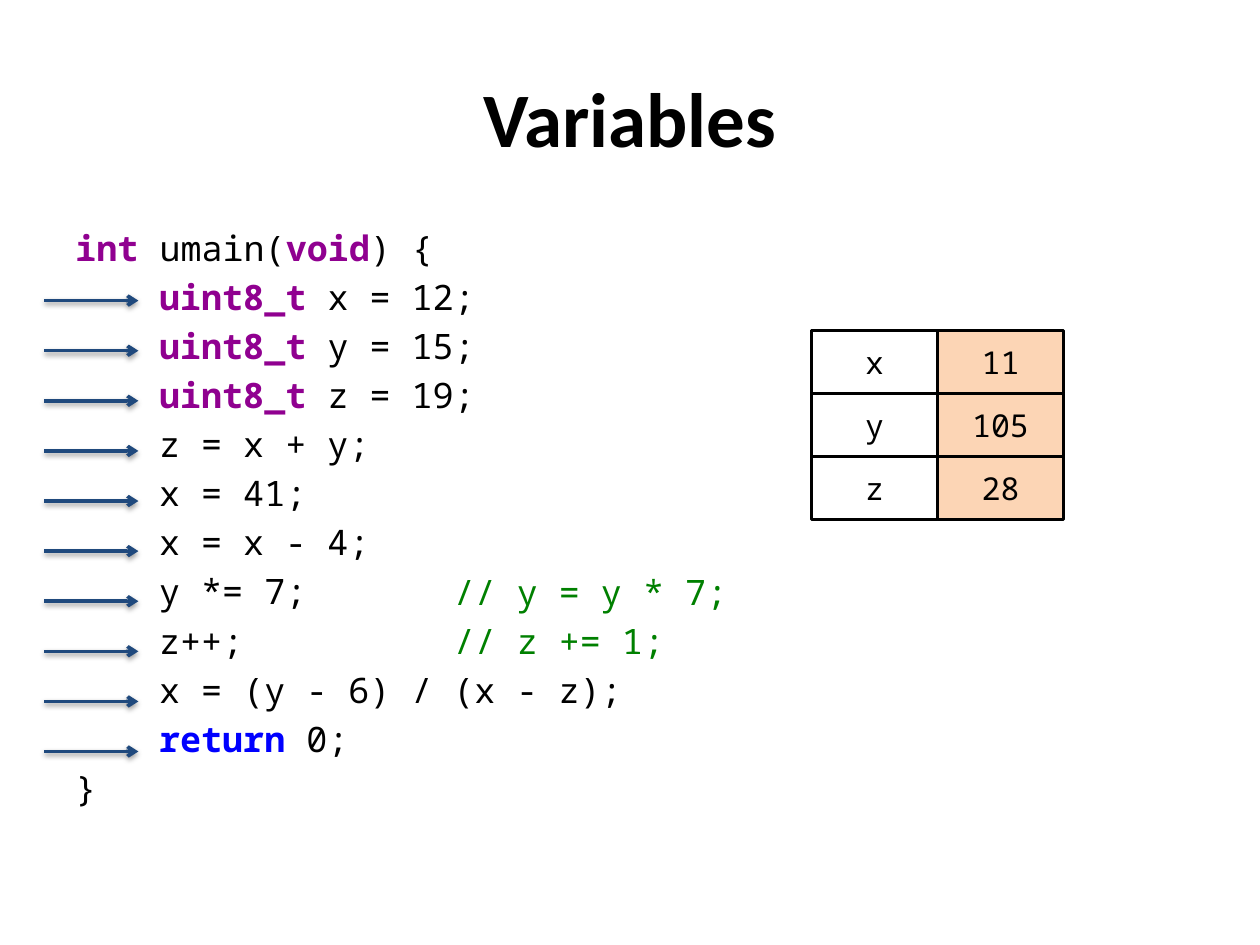
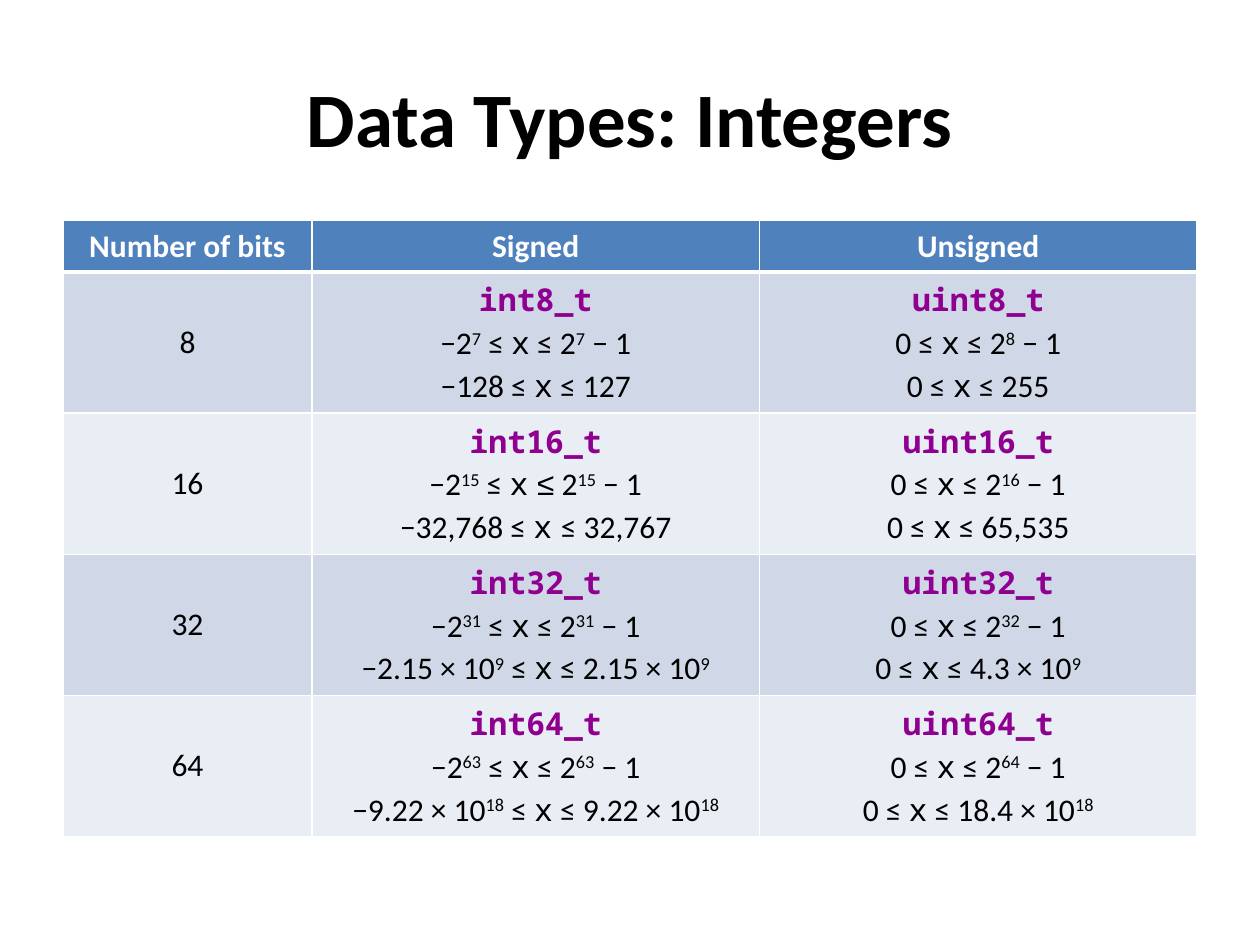
from lxml import etree
from pptx import Presentation
from pptx import util as u
from pptx.dml.color import RGBColor
from pptx.enum import shapes, text
from pptx.oxml.ns import qn

Cm, Pt = u.Cm, u.Pt

COLOURS = {
    "black": "000000", "white": "FFFFFF", "type": "900090", "keyword": "0000FF",
    "comment": "008000", "arrow": "1F497D", "value": "FCD5B5",
    "header": "4F81BD", "band_dark": "D0D8E8", "band_light": "E9EDF4",
}
SANS, MONO = "Calibri", "Noto Sans Mono"
MARKS = {
    "@": {"font": MONO, "colour": "type", "bold": True},
    "$": {"colour": "keyword", "bold": True},
    "^": {"raised": True},
    "`": {"font": MONO},
    "~": {"font": "Arial"},
}

CODE = [
    "@int @umain(@void@) {",
    "@uint8_t @x = 12;",
    "@uint8_t @y = 15;",
    "@uint8_t @z = 19;",
    "z = x + y;",
    "x = 41;",
    "x = x - 4;",
    "y *= 7;",
    "z++;",
    "x = (y - 6) / (x - z);",
    "$return $0;",
    "}",
]
COMMENTS = ["// y = y * 7;", "// z += 1;"]
VARIABLES = [("x", "11"), ("y", "105"), ("z", "28")]
INTEGERS = [
    (8, " ≤", "−128 ≤ `x` ≤ 127", "0 ≤ `x` ≤ 255"),
    (16, "~ ≤~", "−32,768 ≤ `x`~ ~≤ 32,767", "0 ≤ `x` ≤ 65,535"),
    (32, " ≤", "−2.15 × 10^9^ ≤ `x` ≤ 2.15 × 10^9^", "0 ≤ `x` ≤ 4.3 × 10^9^"),
    (64, " ≤", "−9.22 × 10^18^ ≤ `x` ≤ 9.22 × 10^18^", "0 ≤ `x` ≤ 18.4 × 10^18^"),
]


def rgb(name):
    return RGBColor.from_string(COLOURS[name])


def split_marks(line):
    active, piece = None, ""
    for letter in line:
        if letter == active or (active is None and letter in MARKS):
            if piece:
                yield piece, MARKS.get(active, {})
            active, piece = (None if active else letter), ""
        else:
            piece += letter
    if piece:
        yield piece, MARKS.get(active, {})


def write(frame, lines, align=text.PP_ALIGN.CENTER, before=0, **base):
    for number, line in enumerate(lines):
        paragraph = frame.paragraphs[0] if number == 0 else frame.add_paragraph()
        paragraph.alignment = align
        paragraph.space_before = Pt(before)
        for piece, change in split_marks(line):
            look = {"font": SANS, "size": 18, "colour": "black", "bold": False, **base, **change}
            run = paragraph.add_run()
            run.text = piece
            run.font.name = look["font"]
            run.font.size = Pt(look["size"])
            run.font.bold = look["bold"]
            run.font.color.rgb = rgb(look["colour"])
            if look.get("raised"):
                run._r.get_or_add_rPr().set("baseline", "30000")


class Deck:
    def __init__(self):
        self.show = Presentation()
        self.show.slide_width, self.show.slide_height = Cm(25.4), Cm(19.05)
        self.slide = None

    def page(self, heading):
        self.slide = self.show.slides.add_slide(self.show.slide_layouts[5])
        title = self.slide.shapes.title
        title.left, title.top, title.width, title.height = Cm(1.27), Cm(0.76), Cm(22.86), Cm(3.18)
        title.text_frame.vertical_anchor = text.MSO_ANCHOR.MIDDLE
        write(title.text_frame, [heading], size=44, bold=True)

    def code(self, lines, left, top, width, height, colour="black"):
        frame = self.slide.shapes.add_textbox(Cm(left), Cm(top), Cm(width), Cm(height)).text_frame
        frame.word_wrap = True
        write(frame, lines, align=text.PP_ALIGN.LEFT, before=4, font=MONO, size=20, colour=colour)
        return frame.paragraphs

    def box(self, label, left, top, width, height, fill):
        box = self.slide.shapes.add_shape(
            shapes.MSO_SHAPE.RECTANGLE, Cm(left), Cm(top), Cm(width), Cm(height))
        box.shadow.inherit = False
        box.fill.solid()
        box.fill.fore_color.rgb = rgb(fill)
        box.line.color.rgb = rgb("black")
        box.line.width = Pt(2)
        box.text_frame.vertical_anchor = text.MSO_ANCHOR.MIDDLE
        write(box.text_frame, [label], font=MONO)

    def arrow(self, start, end, level):
        arrow = self.slide.shapes.add_connector(
            shapes.MSO_CONNECTOR.STRAIGHT, Cm(start), Cm(level), Cm(end), Cm(level))
        arrow.line.color.rgb = rgb("arrow")
        arrow.line.width = Pt(2)
        etree.SubElement(arrow.line._get_or_add_ln(), qn("a:tailEnd"), type="arrow")
        effects = etree.SubElement(arrow._element.spPr, qn("a:effectLst"))
        shadow = etree.SubElement(effects, qn("a:outerShdw"), blurRad=str(Pt(3.1)),
                                  dist=str(Pt(1.6)), dir="5400000", rotWithShape="0")
        shade = etree.SubElement(shadow, qn("a:srgbClr"), val=COLOURS["black"])
        etree.SubElement(shade, qn("a:alpha"), val="38000")

    def table(self, rows, left, top, widths, heights):
        grid = self.slide.shapes.add_table(
            len(rows), len(widths), Cm(left), Cm(top), Cm(sum(widths)), Cm(sum(heights))).table
        for column, width in zip(grid.columns, widths):
            column.width = Cm(width)
        for number, (row, height) in enumerate(zip(rows, heights)):
            grid.rows[number].height = Cm(height)
            fill = "header" if number == 0 else ("band_light", "band_dark")[number % 2]
            look = {"colour": "white", "bold": True} if number == 0 else {}
            edges = {"L": 1, "R": 1, "T": 3 if number == 1 else 1, "B": 3 if number == 0 else 1}
            for cell, lines in zip(grid.rows[number].cells, row):
                self.edge(cell, edges)
                cell.fill.solid()
                cell.fill.fore_color.rgb = rgb(fill)
                cell.vertical_anchor = text.MSO_ANCHOR.MIDDLE
                write(cell.text_frame, lines, **look)

    def edge(self, cell, edges):
        props = cell._tc.get_or_add_tcPr()
        for side, width in edges.items():
            line = etree.SubElement(props, qn(f"a:ln{side}"), w=str(Pt(width)))
            paint = etree.SubElement(line, qn("a:solidFill"))
            etree.SubElement(paint, qn("a:srgbClr"), val=COLOURS["white"])


def variables(deck):
    deck.page("Variables")
    listing = deck.code(CODE, 1.27, 4.45, 22.86, 12.57)
    for statement in listing[1:-1]:
        props = statement._p.get_or_add_pPr()
        props.set("marL", str(Cm(1.69)))
        props.set("indent", "0")
    deck.code(COMMENTS, 8.9, 11.37, 7, 2.2, colour="comment")
    for step in range(len(CODE) - 2):
        deck.arrow(0.89, 2.79, 6.06 + 1.01 * step)
    for row, (name, value) in enumerate(VARIABLES):
        top = 6.66 + 1.27 * row
        deck.box(name, 16.36, top, 2.54, 1.27, "white")
        deck.box(value, 18.9, top, 2.54, 1.27, "value")


def integers(deck):
    deck.page("Data Types: Integers")
    rows = [[["Number of bits"], ["Signed"], ["Unsigned"]]]
    for bits, below, signed, unsigned in INTEGERS:
        power = bits - 1
        rows.append([
            [str(bits)],
            [f"@int{bits}_t@", f"−2^{power}^ ≤ `x`{below} 2^{power}^ − 1", signed],
            [f"@uint{bits}_t@", f"0 ≤ `x` ≤ 2^{bits}^ − 1", unsigned],
        ])
    deck.table(rows, 1.27, 4.45, [5.02, 9.02, 8.82], [1.02] + [2.84] * len(INTEGERS))


def main():
    deck = Deck()
    variables(deck)
    integers(deck)
    deck.show.save("out.pptx")


if __name__ == "__main__":
    main()
